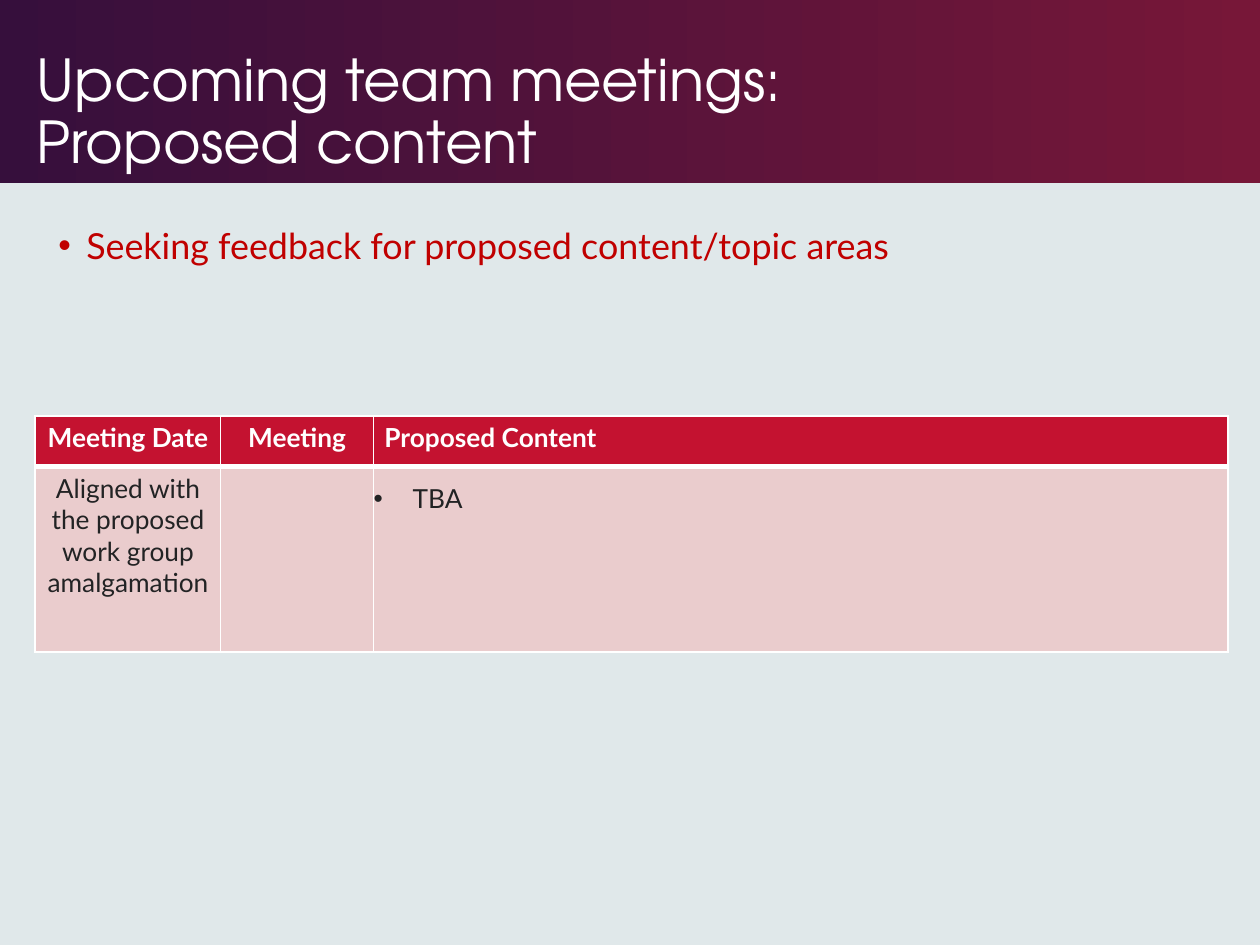
from lxml import etree
from pptx import Presentation
from pptx.dml.color import RGBColor
from pptx.enum.shapes import MSO_SHAPE
from pptx.enum.text import MSO_ANCHOR, PP_ALIGN
from pptx.oxml.ns import qn
from pptx.util import Cm, Pt

RECTANGLE = MSO_SHAPE.RECTANGLE
TOP, BOTTOM = MSO_ANCHOR.TOP, MSO_ANCHOR.BOTTOM
LEFT, CENTER = PP_ALIGN.LEFT, PP_ALIGN.CENTER

COLORS = {
    "background": "E0E8EA",
    "band_start": "360F3C",
    "band_end": "771738",
    "white": "FFFFFF",
    "header": "C41230",
    "body": "EACCCD",
    "text": "222324",
    "feedback": "C00000",
}
TITLE_FONT, BODY_FONT = "TeX Gyre Adventor", "Lato"
SLIDE_WIDTH, SLIDE_HEIGHT = Cm(25.4), Cm(19.05)
MARGIN_X, MARGIN_Y = Cm(0.22), Cm(0.11)
COLUMN_WIDTHS = [Cm(3.74), Cm(3.08), Cm(17.22)]
ROW_HEIGHTS = [Cm(1.02), Cm(3.73)]
HEADINGS = ["Meeting Date", "Meeting", "Proposed Content"]
MEETING = ["Aligned with the proposed work group amalgamation", "", "TBA"]
ALIGNMENTS = [CENTER, CENTER, LEFT]


def rgb(name):
    return RGBColor.from_string(COLORS[name])


def style_text(paragraph, font_name, size, color, bold=False):
    for run in paragraph.runs:
        font = run.font
        font.name, font.size, font.bold = font_name, Pt(size), bold
        font.color.rgb = rgb(color)


def add_bullet(paragraph, indent):
    """Give the paragraph a round bullet with a hanging indent."""
    properties = paragraph._p.get_or_add_pPr()
    properties.set("marL", str(indent))
    properties.set("indent", str(-indent))
    bullet_font = etree.SubElement(properties, qn("a:buFont"))
    bullet_font.set("typeface", "Arial")
    etree.SubElement(properties, qn("a:buChar")).set("char", "•")


def set_margins(target, x, y):
    target.margin_left = target.margin_right = x
    target.margin_top = target.margin_bottom = y


def set_borders(cell, bottom_width):
    widths = {"a:lnL": 1, "a:lnR": 1, "a:lnT": 1, "a:lnB": bottom_width}
    for tag, width in widths.items():
        line = etree.SubElement(cell._tc.get_or_add_tcPr(), qn(tag))
        line.set("w", str(Pt(width)))
        fill = etree.SubElement(line, qn("a:solidFill"))
        etree.SubElement(fill, qn("a:srgbClr")).set("val", COLORS["white"])


def add_title_band(slide):
    band = slide.shapes.add_shape(RECTANGLE, 0, 0, SLIDE_WIDTH, Cm(3.69))
    band.shadow.inherit = False
    band.line.fill.background()
    band.fill.gradient()
    band.fill.gradient_angle = 0
    for stop, color in zip(band.fill.gradient_stops, ["band_start", "band_end"]):
        stop.color.rgb = rgb(color)


def add_text(slide, text, left, top, width, height, anchor=TOP):
    """Add a wrapping text box and return its paragraph."""
    frame = slide.shapes.add_textbox(left, top, width, height).text_frame
    frame.word_wrap = True
    frame.vertical_anchor = anchor
    set_margins(frame, MARGIN_X, MARGIN_Y)
    frame.text = text
    return frame.paragraphs[0]


def fill_cell(cell, text, alignment, is_header):
    set_borders(cell, 3 if is_header else 1)
    cell.fill.solid()
    cell.fill.fore_color.rgb = rgb("header" if is_header else "body")
    set_margins(cell, MARGIN_X, MARGIN_Y)
    cell.text = text
    paragraph = cell.text_frame.paragraphs[0]
    paragraph.alignment = alignment
    style_text(paragraph, BODY_FONT, 15, "white" if is_header else "text", is_header)


def add_meeting_table(slide):
    table = slide.shapes.add_table(
        2, 3, Cm(0.71), Cm(8.39), sum(COLUMN_WIDTHS), sum(ROW_HEIGHTS)
    ).table
    for column, width in zip(table.columns, COLUMN_WIDTHS):
        column.width = width
    for row, height in zip(table.rows, ROW_HEIGHTS):
        row.height = height
    for row_index, texts in enumerate([HEADINGS, MEETING]):
        for column_index, text in enumerate(texts):
            fill_cell(table.cell(row_index, column_index), text,
                      ALIGNMENTS[column_index], row_index == 0)

    content = table.cell(1, 2)
    set_margins(content, 0, 0)
    topic = content.text_frame.paragraphs[0]
    topic.line_spacing = 1.5
    add_bullet(topic, Cm(0.79))


def main():
    presentation = Presentation()
    presentation.slide_width, presentation.slide_height = SLIDE_WIDTH, SLIDE_HEIGHT
    slide = presentation.slides.add_slide(presentation.slide_layouts[6])
    slide.background.fill.solid()
    slide.background.fill.fore_color.rgb = rgb("background")

    add_title_band(slide)
    title = add_text(slide, "Upcoming team meetings: Proposed content",
                     Cm(0.51), Cm(0.38), Cm(18.75), Cm(3.28), BOTTOM)
    title.line_spacing = 0.9
    style_text(title, TITLE_FONT, 33, "white")

    add_meeting_table(slide)
    feedback = add_text(slide, "Seeking feedback for proposed content/topic areas",
                        Cm(0.96), Cm(4.4), Cm(23.39), Cm(3.12))
    add_bullet(feedback, Cm(0.56))
    style_text(feedback, BODY_FONT, 20.5, "feedback")

    presentation.save("out.pptx")


if __name__ == "__main__":
    main()
